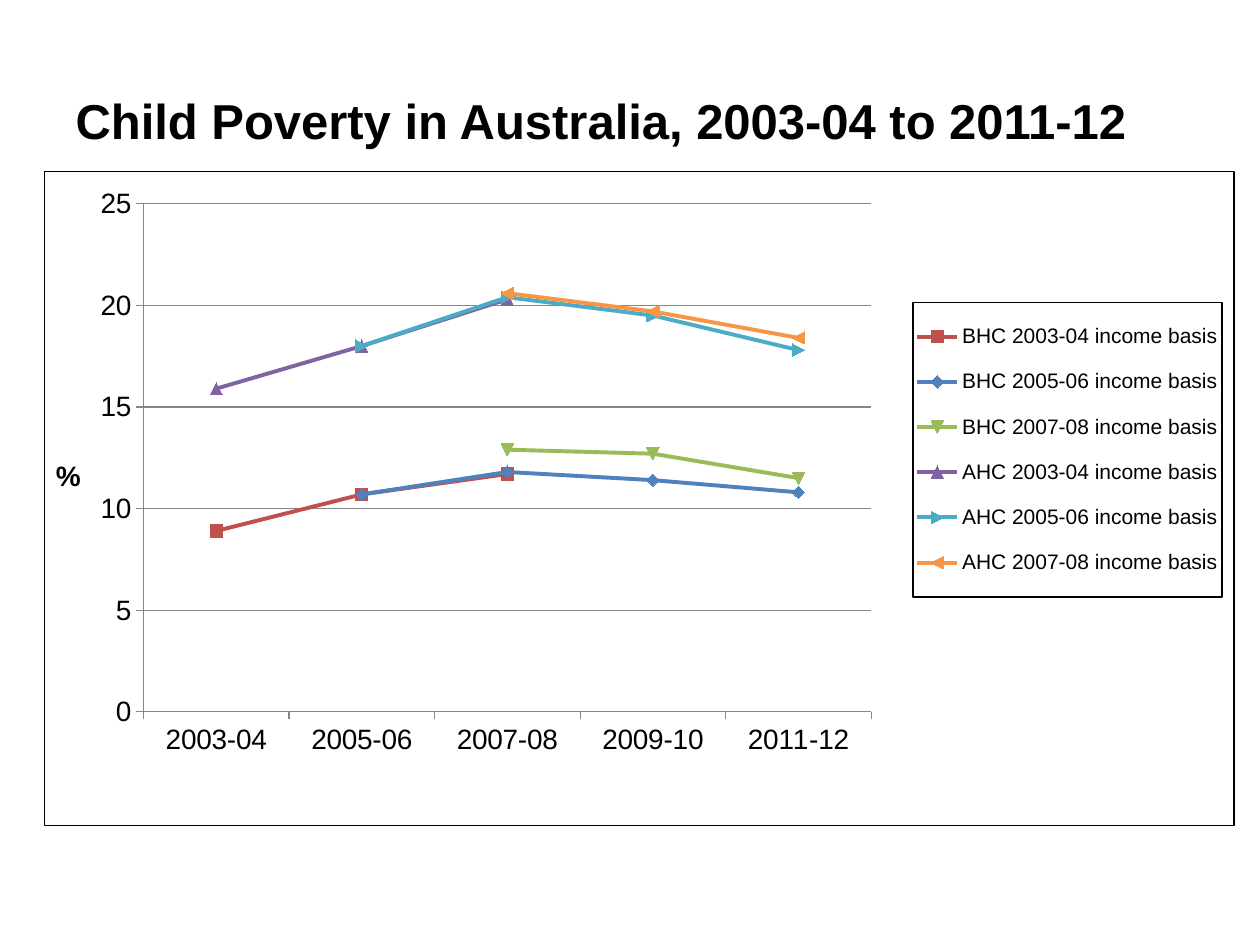
from lxml.etree import SubElement
from pptx import Presentation
from pptx.chart.data import CategoryChartData
from pptx.dml.color import RGBColor
from pptx.enum.chart import XL_CHART_TYPE, XL_LEGEND_POSITION, XL_TICK_MARK
from pptx.enum.text import MSO_ANCHOR, PP_ALIGN
from pptx.oxml import parse_xml
from pptx.oxml.ns import nsdecls, qn
from pptx.util import Cm, Pt

TITLE = "Child Poverty in Australia, 2003-04 to 2011-12"
YEARS = ["2003-04", "2005-06", "2007-08", "2009-10", "2011-12"]
SERIES = [
    ("BHC 2003-04 income basis", "red", [8.9, 10.7, 11.7, None, None]),
    ("BHC 2005-06 income basis", "blue", [None, 10.7, 11.8, 11.4, 10.8]),
    ("BHC 2007-08 income basis", "green", [None, None, 12.9, 12.7, 11.5]),
    ("AHC 2003-04 income basis", "purple", [15.9, 18, 20.3, None, None]),
    ("AHC 2005-06 income basis", "teal", [None, 18, 20.4, 19.5, 17.8]),
    ("AHC 2007-08 income basis", "orange", [None, None, 20.6, 19.7, 18.4]),
]
COLORS = {
    "black": "000000", "gray": "868686", "red": "C0504D", "blue": "4F81BD",
    "green": "9BBB59", "purple": "8064A2", "teal": "4BACC6", "orange": "F79646",
}
FONT = "Arial"


def color(name):
    return RGBColor.from_string(COLORS[name])


def set_font(font, size, bold=False):
    font.name = FONT
    font.size = Pt(size)
    font.bold = bold
    font.color.rgb = color("black")


def set_layout(element, index, **fractions):
    for old in element.findall(qn("c:layout")):
        element.remove(old)
    layout = parse_xml(f"<c:layout {nsdecls('c')}/>")
    manual = SubElement(layout, qn("c:manualLayout"))
    if "w" in fractions and index == 0:
        SubElement(manual, qn("c:layoutTarget")).set("val", "inner")
    for side in ("x", "y"):
        SubElement(manual, qn(f"c:{side}Mode")).set("val", "edge")
    for key, value in fractions.items():
        SubElement(manual, qn(f"c:{key}")).set("val", str(value))
    element.insert(index, layout)


def add_border(element):
    border = parse_xml(
        f"<c:spPr {nsdecls('c', 'a')}><a:noFill/><a:ln w=\"{Pt(0.75)}\"><a:solidFill>"
        f"<a:srgbClr val=\"{COLORS['black']}\"/></a:solidFill></a:ln></c:spPr>"
    )
    element.find(qn("c:txPr")).addprevious(border)


def add_title(slide):
    title = slide.shapes.title
    title.left, title.top, title.width, title.height = Cm(1.27), Cm(1.32), Cm(22.86), Cm(2.21)
    frame = title.text_frame
    frame.text = TITLE
    frame.word_wrap = True
    frame.vertical_anchor = MSO_ANCHOR.MIDDLE
    paragraph = frame.paragraphs[0]
    paragraph.alignment = PP_ALIGN.LEFT
    set_font(paragraph.font, 28, True)


def format_axes(chart):
    value_axis, category_axis = chart.value_axis, chart.category_axis
    value_axis.minimum_scale, value_axis.maximum_scale, value_axis.major_unit = 0, 25, 5
    value_axis.tick_labels.number_format = "0"
    value_axis.tick_labels.number_format_is_linked = False
    value_axis.has_major_gridlines = True
    for axis in (value_axis, category_axis):
        axis.major_tick_mark = XL_TICK_MARK.OUTSIDE
        axis.minor_tick_mark = XL_TICK_MARK.NONE
        set_font(axis.tick_labels.font, 16)
    for part in (value_axis, category_axis, value_axis.major_gridlines):
        part.format.line.color.rgb = color("gray")
        part.format.line.width = Pt(0.75)

    axis_title = value_axis.axis_title
    frame = axis_title.text_frame
    frame.text = "%"
    set_font(frame.paragraphs[0].font, 16, True)
    body = axis_title._element.find(".//" + qn("a:bodyPr"))
    body.set("rot", "0")
    body.set("vert", "horz")
    set_layout(axis_title._element, 1, x=0.005, y=0.43)


def add_poverty_chart(slide):
    data = CategoryChartData(number_format="0.0")
    data.categories = YEARS
    for name, _, values in SERIES:
        data.add_series(name, values)
    chart = slide.shapes.add_chart(
        XL_CHART_TYPE.LINE_MARKERS, Cm(0.89), Cm(3.45), Cm(24), Cm(13.21), data
    ).chart
    chart.has_title = False
    set_font(chart.font, 16)
    add_border(chart._chartSpace)
    chart.plots[0].vary_by_categories = False
    for series, (_, name, _) in zip(chart.plots[0].series, SERIES):
        series.smooth = False
        series.format.line.color.rgb = color(name)
        series.format.line.width = Pt(2.25)
        marker = series.marker
        marker.size = 7
        marker.format.fill.solid()
        marker.format.fill.fore_color.rgb = color(name)
        marker.format.line.color.rgb = color(name)
    format_axes(chart)

    chart.has_legend = True
    legend = chart.legend
    legend.position = XL_LEGEND_POSITION.RIGHT
    legend.include_in_layout = False
    set_font(legend.font, 12)
    add_border(legend._element)
    set_layout(legend._element, 1, x=0.73, y=0.2, w=0.26, h=0.45)
    plot_area = chart._chartSpace.find(".//" + qn("c:plotArea"))
    set_layout(plot_area, 0, x=0.083, y=0.049, w=0.612, h=0.777)


def main():
    presentation = Presentation()
    presentation.slide_width, presentation.slide_height = Cm(25.4), Cm(19.05)
    slide = presentation.slides.add_slide(presentation.slide_layouts[5])
    add_title(slide)
    add_poverty_chart(slide)
    presentation.save("out.pptx")


if __name__ == "__main__":
    main()
